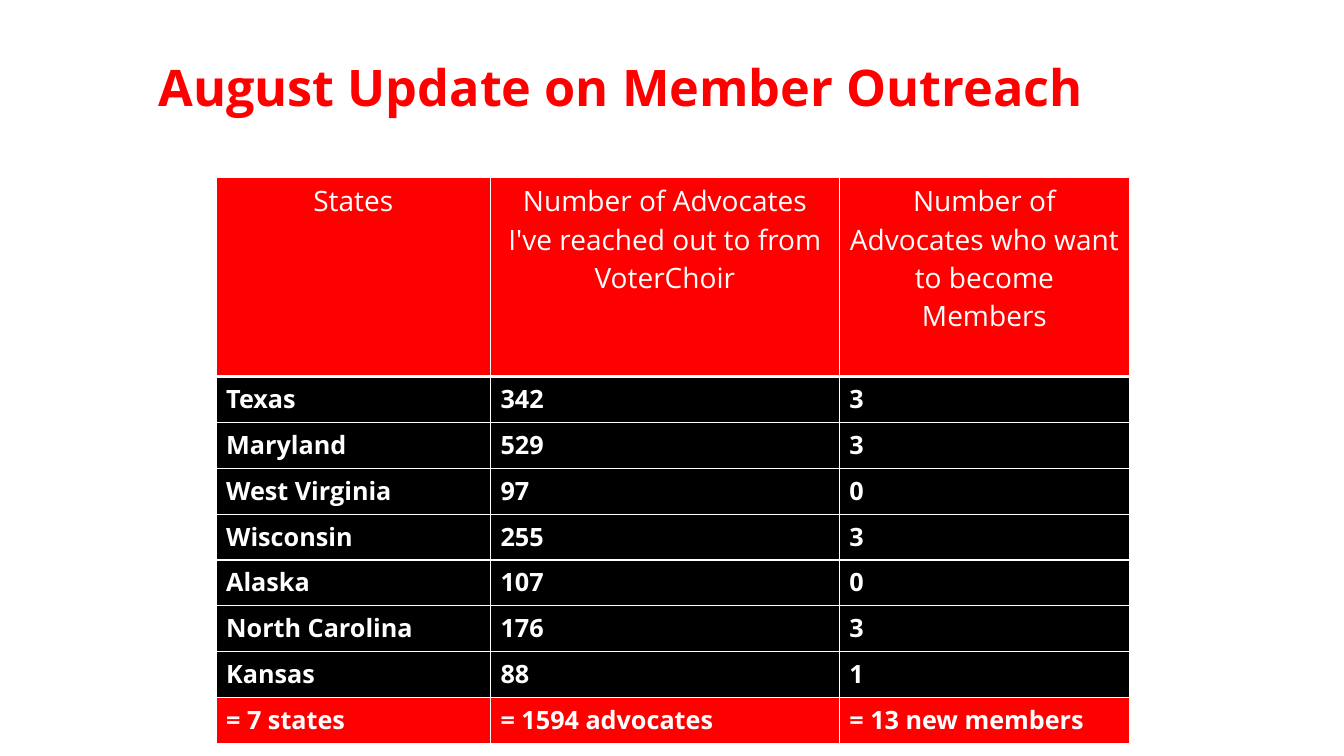
from typing import NamedTuple

from lxml.etree import SubElement
from pptx import Presentation
from pptx.dml.color import RGBColor
from pptx.enum.text import MSO_ANCHOR, PP_ALIGN
from pptx.oxml.ns import qn
from pptx.slide import Slide
from pptx.table import _Cell
from pptx.text.text import TextFrame
from pptx.util import Inches, Pt

RED = RGBColor(0xFF, 0x00, 0x00)
BLACK = RGBColor(0x00, 0x00, 0x00)
WHITE = RGBColor(0xFF, 0xFF, 0xFF)
FONT = "Open Sans"
WIDE, HIGH = Inches(13.33), Inches(7.5)


class Look(NamedTuple):
    size: int
    bold: bool
    color: RGBColor
    align: PP_ALIGN


class Row(NamedTuple):
    state: str
    reached: str
    joined: str


TITLE = Look(36, True, RED, PP_ALIGN.CENTER)
HEAD = Look(20, False, WHITE, PP_ALIGN.CENTER)
BODY = Look(18, True, WHITE, PP_ALIGN.LEFT)

ROWS = [
    Row("States", "Number of Advocates I've reached out to from VoterChoir",
        "Number of Advocates who want to become Members"),
    Row("Texas", "342", "3"),
    Row("Maryland", "529", "3"),
    Row("West Virginia", "97", "0"),
    Row("Wisconsin", "255", "3"),
    Row("Alaska", "107", "0"),
    Row("North Carolina", "176", "3"),
    Row("Kansas", "88", "1"),
    Row("= 7 states", "= 1594 advocates", "= 13 new members"),
]
LAST = len(ROWS) - 1

# Shares of the slide's width and height, in percent
COLS = (20.42, 25.95, 21.6)
HEAD_ROW, BODY_ROW = 26.4, 6.07


def across(share: float) -> int:
    return round(WIDE * share / 100)


def down(share: float) -> int:
    return round(HIGH * share / 100)


def write(frame: TextFrame, text: str, look: Look) -> None:
    frame.text = text
    line = frame.paragraphs[0]
    line.alignment = look.align
    font = line.runs[0].font
    font.name, font.size, font.bold = FONT, Pt(look.size), look.bold
    font.color.rgb = look.color


def edge(cell: _Cell, base: int) -> None:
    """Give the cell white borders, with its own width at the base."""
    props = cell._tc.get_or_add_tcPr()
    for tag, width in (("lnL", 1), ("lnR", 1), ("lnT", 1), ("lnB", base)):
        line = SubElement(props, qn(f"a:{tag}"), w=str(Pt(width)))
        fill = SubElement(line, qn("a:solidFill"))
        SubElement(fill, qn("a:srgbClr"), val=str(WHITE))


def add_title(slide: Slide) -> None:
    box = slide.shapes.add_textbox(
        across(3.07), down(2.27), across(86.25), down(19.33))
    frame = box.text_frame
    frame.word_wrap = True
    frame.vertical_anchor = MSO_ANCHOR.MIDDLE
    write(frame, "August Update on Member Outreach", TITLE)
    frame.paragraphs[0].line_spacing = 0.9


def add_states(slide: Slide) -> None:
    high = HEAD_ROW + BODY_ROW * LAST
    table = slide.shapes.add_table(
        len(ROWS), len(COLS), across(16.08), down(23.4),
        across(sum(COLS)), down(high)).table
    for col, share in zip(table.columns, COLS):
        col.width = across(share)
    for r, row in enumerate(ROWS):
        table.rows[r].height = down(BODY_ROW if r else HEAD_ROW)
        for c, text in enumerate(row):
            cell = table.cell(r, c)
            edge(cell, 1 if r else 3)
            cell.fill.solid()
            cell.fill.fore_color.rgb = RED if r in (0, LAST) else BLACK
            write(cell.text_frame, text, BODY if r else HEAD)


def main() -> None:
    deck = Presentation()
    deck.slide_width, deck.slide_height = WIDE, HIGH
    slide = deck.slides.add_slide(deck.slide_layouts[6])
    add_title(slide)
    add_states(slide)
    deck.save("out.pptx")


if __name__ == "__main__":
    main()
